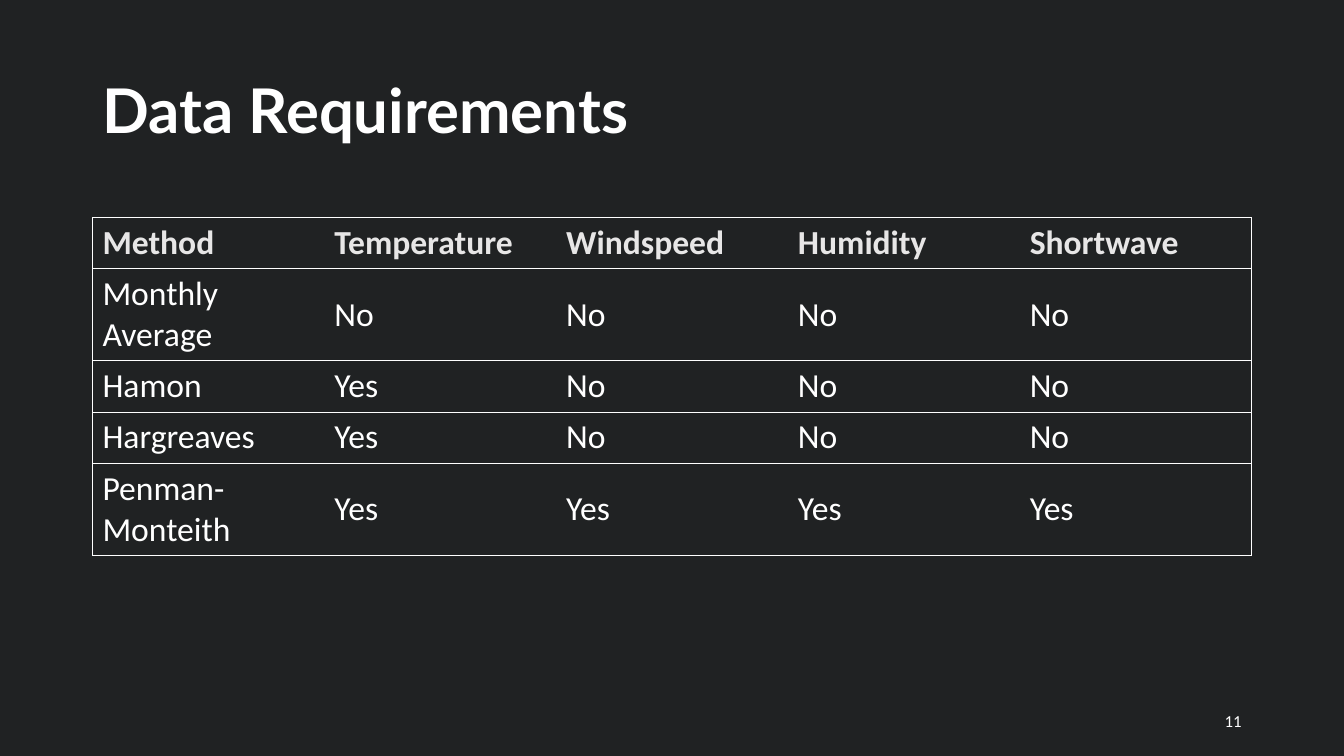
import pptx
import pptx.dml.color
import pptx.enum.text
import pptx.oxml
import pptx.oxml.ns
import pptx.util
from pptx.util import Cm

BACKGROUND, WHITE, LIGHT_GREY = "202223", "FFFFFF", "E7E6E6"
ALIGN = pptx.enum.text.PP_ALIGN
ANCHOR = pptx.enum.text.MSO_ANCHOR

REQUIREMENTS = [
    ["Method", "Temperature", "Windspeed", "Humidity", "Shortwave"],
    ["Monthly Average", "No", "No", "No", "No"],
    ["Hamon", "Yes", "No", "No", "No"],
    ["Hargreaves", "Yes", "No", "No", "No"],
    ["Penman-Monteith", "Yes", "Yes", "Yes", "Yes"],
]
SINGLE_LINE, DOUBLE_LINE = Cm(1.29), Cm(2.32)
ROW_HEIGHTS = [SINGLE_LINE, DOUBLE_LINE, SINGLE_LINE, SINGLE_LINE, DOUBLE_LINE]

TITLE = {"name": "Lato", "size": pptx.util.Pt(44), "bold": True}
HEADER = {"name": "Calibri", "size": pptx.util.Pt(24), "bold": True}
BODY = {**HEADER, "bold": False}
NUMBER = {"name": "Calibri", "size": pptx.util.Pt(12), "bold": False}


def color(value):
    return pptx.dml.color.RGBColor.from_string(value)


def write(frame, text, font, font_color, align=ALIGN.LEFT):
    """Put one formatted paragraph in a text frame."""
    frame.word_wrap = True
    para = frame.paragraphs[0]
    para.alignment = align
    span = para.add_run()
    span.text = text
    for name, value in font.items():
        setattr(span.font, name, value)
    span.font.color.rgb = color(font_color)
    return para


def set_borders(cell, visible_sides):
    """Draw thin white lines on the given sides and none on the others."""
    properties = cell._tc.get_or_add_tcPr()
    namespace = pptx.oxml.ns.nsdecls("a")
    solid = f'<a:solidFill><a:srgbClr val="{WHITE}"/></a:solidFill>'
    for side in "LRTB":
        fill = solid if side in visible_sides else "<a:noFill/>"
        properties.append(pptx.oxml.parse_xml(
            f'<a:ln{side} {namespace} w="{pptx.util.Pt(0.5)}">{fill}</a:ln{side}>'))


def add_title(page, text):
    box = page.shapes.title
    place = {"left": Cm(2.33), "top": Cm(1.01), "width": Cm(29.21), "height": Cm(3.68)}
    for name, value in place.items():
        setattr(box, name, value)
    box.text_frame.vertical_anchor = ANCHOR.MIDDLE
    write(box.text_frame, text, TITLE, WHITE).line_spacing = 0.9


def add_requirements_table(page):
    column_count = len(REQUIREMENTS[0])
    table = page.shapes.add_table(
        len(REQUIREMENTS), column_count,
        Cm(2.33), Cm(5.48), Cm(29.21), sum(ROW_HEIGHTS)).table
    table.first_row = table.horz_banding = False
    for row, height in zip(table.rows, ROW_HEIGHTS):
        row.height = height
    for row_index, texts in enumerate(REQUIREMENTS):
        for column_index, text in enumerate(texts):
            cell = table.cell(row_index, column_index)
            left = "L" if column_index == 0 else ""
            right = "R" if column_index == column_count - 1 else ""
            set_borders(cell, "TB" + left + right)
            cell.fill.background()
            if row_index == 0:
                write(cell.text_frame, text, HEADER, LIGHT_GREY)
            else:
                cell.vertical_anchor = ANCHOR.MIDDLE
                write(cell.text_frame, text, BODY, WHITE)


def add_page_number(page, text):
    box = page.shapes.add_textbox(Cm(23.92), Cm(17.65), Cm(7.62), Cm(1.01))
    box.text_frame.vertical_anchor = ANCHOR.MIDDLE
    write(box.text_frame, text, NUMBER, WHITE, ALIGN.RIGHT)


def main():
    deck = pptx.Presentation()
    deck.slide_width, deck.slide_height = Cm(33.87), Cm(19.05)
    page = deck.slides.add_slide(deck.slide_layouts.get_by_name("Title Only"))
    page.background.fill.solid()
    page.background.fill.fore_color.rgb = color(BACKGROUND)
    add_page_number(page, "11")
    add_title(page, "Data Requirements")
    add_requirements_table(page)
    deck.save("out.pptx")


if __name__ == "__main__":
    main()
